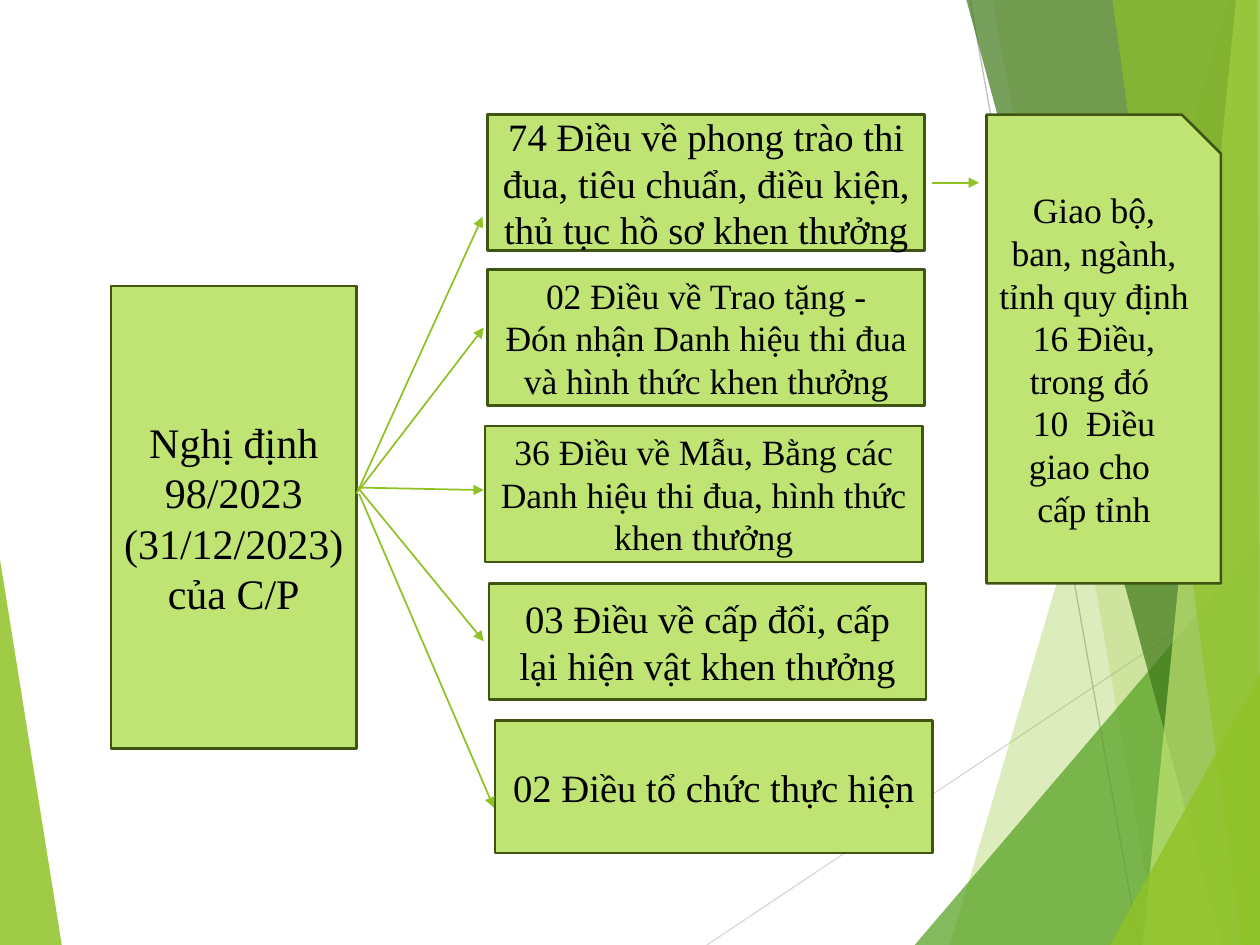
from pptx import Presentation
from pptx.dml.color import RGBColor as RGB
from pptx.enum.shapes import MSO_CONNECTOR as CONN, MSO_SHAPE as SHAPE
from pptx.enum.text import MSO_ANCHOR as ANCHOR, PP_ALIGN as ALIGN
from pptx.oxml.ns import qn
from pptx.util import Inches, Pt
from lxml.etree import SubElement as Sub

THEME = dict(
    font="Times New Roman", text="000000", box="C0E474", edge="3F5511",
    lime="90C226", green="54A021", dark="3F7819", pale="D9D9D9", grey="BFBFBF",
    big=24, mid=22.1, small=20.3, rim=1.5, arrow=1, hair=0.75,
)

# Content: the decree, its parts (left, top, height, size, lines), the task
DECREE = ["Nghị định 98/2023 (31/12/2023) của C/P"]
PARTS = [
    (3.87, 0.91, 1.08, "mid",
     ["74 Điều về phong trào thi đua, tiêu chuẩn, điều kiện, thủ tục hồ sơ khen thưởng"]),
    (3.87, 2.14, 1.08, "small",
     ["02 Điều về Trao tặng -", "Đón nhận Danh hiệu thi đua và hình thức khen thưởng"]),
    (3.85, 3.38, 1.08, "small",
     ["36 Điều về Mẫu, Bằng các Danh hiệu thi đua, hình thức khen thưởng"]),
    (3.88, 4.63, 0.92, "mid",
     ["03 Điều về cấp đổi, cấp lại hiện vật khen thưởng"]),
    (3.93, 5.72, 1.05, "mid", ["02 Điều tổ chức thực hiện"]),
]
TASK = ["Giao bộ, ban, ngành, tỉnh quy định 16 Điều, trong đó ",
        "10  Điều giao cho ", "cấp tỉnh"]
PART_W = 3.47

# Arrows: from x, y to x, y
ARROWS = [
    (2.83, 3.92, 3.83, 1.72), (2.85, 3.89, 3.84, 2.6), (2.85, 3.87, 3.84, 3.89),
    (2.84, 3.87, 3.84, 5.09), (2.85, 3.92, 3.92, 6.41), (7.4, 1.45, 7.77, 1.45),
]

# Backdrop: colour, opacity in percent, corners
WEDGE = ("lime", 85, [(0, 4.44), (0.49, 7.5), (0, 7.5)])
RAYS = [("pale", (5.61, 7.5, 10, 4.57)), ("grey", (7.7, 0, 9.04, 7.5))]
SHARDS = [
    ("lime", 30, [(9.75, 0), (7.54, 7.5), (10, 7.5), (10, 0)]),
    ("lime", 20, [(7.88, 0), (9.19, 7.5), (10, 7.5), (10, 0)]),
    ("green", 72, [(7.26, 7.5), (10, 4.29), (10, 7.5)]),
    ("dark", 70, [(7.67, 0), (9.7, 7.5), (10, 7.5), (10, 0)]),
    ("box", 70, [(9.81, 0), (9.07, 7.5), (10, 7.5), (10, 0)]),
    ("lime", 65, [(8.83, 0), (9.86, 7.5), (10, 7.5), (9.98, 0)]),
    ("lime", 80, [(8.81, 7.5), (10, 5.35), (10, 7.5)]),
]


def tint(name):
    return RGB.from_string(THEME[name])


def write(shape, lines, size="mid", color="text", align=ALIGN.CENTER):
    frame = shape.text_frame
    frame.word_wrap = True
    frame.vertical_anchor = ANCHOR.MIDDLE
    for i, line in enumerate(lines):
        para = frame.paragraphs[0] if i == 0 else frame.add_paragraph()
        para.alignment = align
        run = para.add_run()
        run.text = line
        run.font.name = THEME["font"]
        run.font.size = Pt(THEME[size])
        run.font.color.rgb = tint(color)


def box(slide, area, lines, size, kind=SHAPE.RECTANGLE):
    shape = slide.shapes.add_shape(kind, *map(Inches, area))
    shape.shadow.inherit = False
    shape.fill.solid()
    shape.fill.fore_color.rgb = tint("box")
    shape.line.color.rgb = tint("edge")
    shape.line.width = Pt(THEME["rim"])
    write(shape, lines, size=size)


def link(slide, ends, color, width, head=False):
    line = slide.shapes.add_connector(CONN.STRAIGHT, *map(Inches, ends))
    line.line.color.rgb = tint(color)
    line.line.width = Pt(THEME[width])
    if head:
        Sub(line.line._get_or_add_ln(), qn("a:tailEnd"), type="triangle")
    Sub(line._element.spPr, qn("a:effectLst"))


def shard(slide, color, alpha, points):
    spots = [(Inches(x), Inches(y)) for x, y in points]
    pen = slide.shapes.build_freeform(*spots[0])
    pen.add_line_segments(spots[1:], close=True)
    shape = pen.convert_to_shape()
    shape.shadow.inherit = False
    shape.line.fill.background()
    shape.fill.solid()
    shape.fill.fore_color.rgb = tint(color)
    clr = shape._element.spPr.find(qn("a:solidFill"))[0]
    Sub(clr, qn("a:alpha"), val=str(alpha * 1000))


def main():
    deck = Presentation()
    deck.slide_width, deck.slide_height = Inches(10), Inches(7.5)
    slide = deck.slides.add_slide(deck.slide_layouts[6])

    # Backdrop
    shard(slide, *WEDGE)
    for color, ends in RAYS:
        link(slide, ends, color, "hair")
    for item in SHARDS:
        shard(slide, *item)

    # Decree, its parts and the task
    box(slide, (0.88, 2.27, 1.95, 3.67), DECREE, "big")
    for left, top, height, size, lines in PARTS:
        box(slide, (left, top, PART_W, height), lines, size)
    for ends in ARROWS:
        link(slide, ends, "lime", "arrow", head=True)
    box(slide, (7.83, 0.91, 1.86, 3.72), TASK, "small", SHAPE.SNIP_1_RECTANGLE)

    deck.save("out.pptx")


if __name__ == "__main__":
    main()
